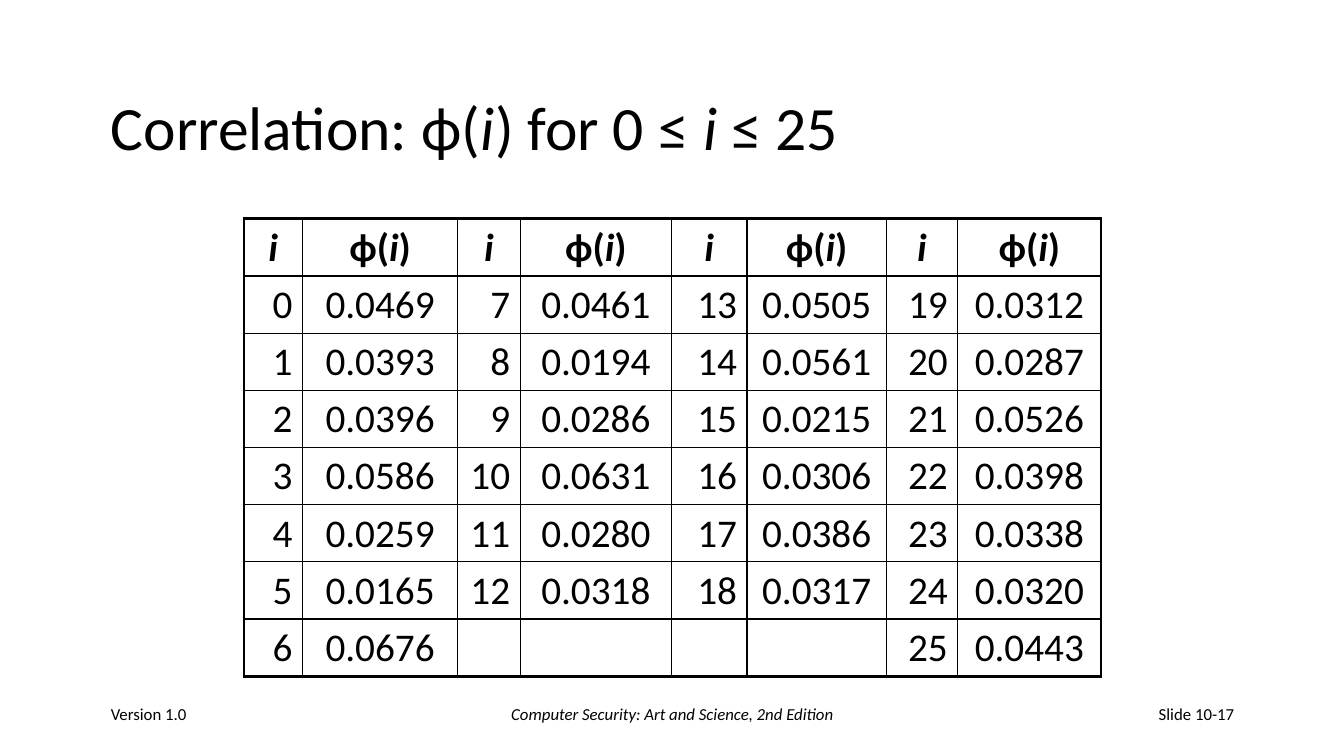
import pptx
import pptx.dml.color
import pptx.enum.text
import pptx.oxml.ns
import pptx.util
from lxml import etree

Inches = pptx.util.Inches
Pt = pptx.util.Pt
ALIGN = pptx.enum.text.PP_ALIGN
BLACK = pptx.dml.color.RGBColor(0, 0, 0)

WIDTHS = [0.58, 1.54, 0.62, 1.5, 0.75, 1.38, 0.71, 1.42]
PHI = [
    "0.0469", "0.0393", "0.0396", "0.0586", "0.0259", "0.0165", "0.0676",
    "0.0461", "0.0194", "0.0286", "0.0631", "0.0280", "0.0318",
    "0.0505", "0.0561", "0.0215", "0.0306", "0.0386", "0.0317",
    "0.0312", "0.0287", "0.0526", "0.0398", "0.0338", "0.0320", "0.0443",
]
STARTS = [0, 7, 13, 19, len(PHI)]


class Deck:
    font = "Calibri"
    color = BLACK
    thin = 1
    thick = 2.25

    def __init__(self, slide):
        self.slide = slide

    def fill_text(self, frame, runs, size, align, bold=False):
        para = frame.paragraphs[0]
        para.alignment = align
        for text, slant in runs:
            run = para.add_run()
            run.text = text
            run.font.name = self.font
            run.font.size = Pt(size)
            run.font.bold = bold
            run.font.italic = slant
            run.font.color.rgb = self.color
        return para

    def text(self, left, top, width, height, runs, size, align=ALIGN.LEFT):
        box = self.slide.shapes.add_textbox(
            Inches(left), Inches(top), Inches(width), Inches(height))
        frame = box.text_frame
        frame.word_wrap = True
        frame.vertical_anchor = pptx.enum.text.MSO_ANCHOR.MIDDLE
        return self.fill_text(frame, runs, size, align)

    def border(self, cell, side, width):
        props = cell._tc.get_or_add_tcPr()
        name = pptx.oxml.ns.qn
        line = etree.SubElement(props, name(f"a:ln{side}"), w=str(Pt(width)))
        fill = etree.SubElement(line, name("a:solidFill"))
        etree.SubElement(fill, name("a:srgbClr"), val=str(self.color))

    def table(self, left, top, widths, height, count):
        shape = self.slide.shapes.add_table(
            count, len(widths), Inches(left), Inches(top),
            Inches(sum(widths)), Inches(height * count))
        grid = shape.table
        grid.first_row = False
        grid.horz_banding = False
        for col, width in zip(grid.columns, widths):
            col.width = Inches(width)
        for row in range(count):
            grid.rows[row].height = Inches(height)
            for col in range(len(widths)):
                cell = grid.cell(row, col)
                edges = {"L": col == 0, "R": col == len(widths) - 1,
                         "T": row == 0, "B": row == count - 1}
                for side, outer in edges.items():
                    self.border(cell, side, self.thick if outer else self.thin)
                cell.fill.background()
        return grid


def main():
    show = pptx.Presentation()
    show.slide_width = Inches(13.33)
    show.slide_height = Inches(7.5)
    deck = Deck(show.slides.add_slide(show.slide_layouts[6]))

    title = deck.text(1, 0.67, 11.33, 1.25, [
        ("Correlation: ϕ(", False), ("i", True), (") for 0 ≤ ", False),
        ("i", True), (" ≤ 25", False)], 44)
    title.line_spacing = 0.9

    grid = deck.table(2.42, 2.17, WIDTHS, 0.56, 8)
    for pair, (start, end) in enumerate(zip(STARTS, STARTS[1:])):
        left, right = 2 * pair, 2 * pair + 1
        deck.fill_text(grid.cell(0, left).text_frame, [("i", True)],
                       28, ALIGN.CENTER, True)
        deck.fill_text(grid.cell(0, right).text_frame,
                       [("ϕ(", False), ("i", True), (")", False)],
                       28, ALIGN.CENTER, True)
        for row, index in enumerate(range(start, end), 1):
            deck.fill_text(grid.cell(row, left).text_frame,
                           [(str(index), False)], 28, ALIGN.RIGHT)
            deck.fill_text(grid.cell(row, right).text_frame,
                           [(PHI[index], False)], 28, ALIGN.CENTER)

    deck.text(1, 6.83, 2.78, 0.5, [("Version 1.0", False)], 12)
    deck.text(4.56, 6.83, 4.22, 0.5,
              [("Computer Security: Art and Science, 2nd Edition", True)],
              12, ALIGN.CENTER)
    deck.text(9.56, 6.83, 2.78, 0.5, [("Slide 10-17", False)], 12, ALIGN.RIGHT)
    show.save("out.pptx")


if __name__ == "__main__":
    main()
